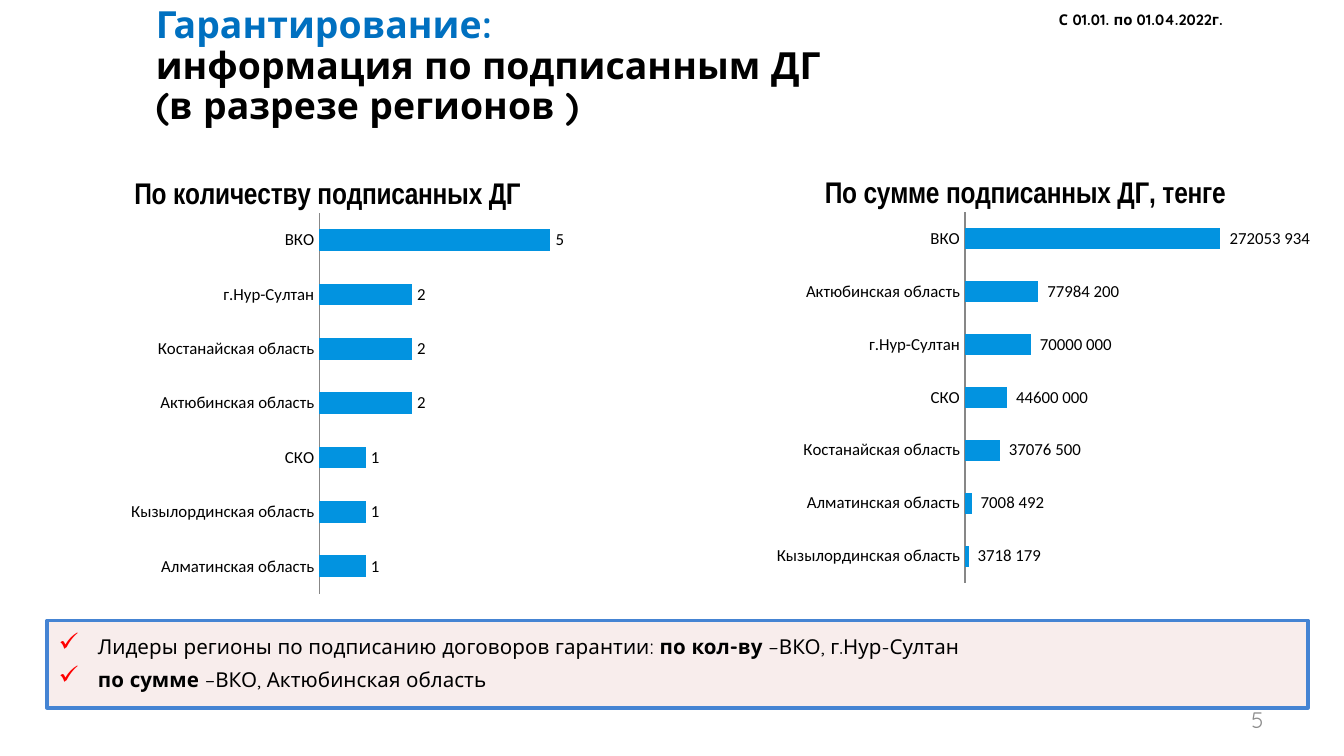
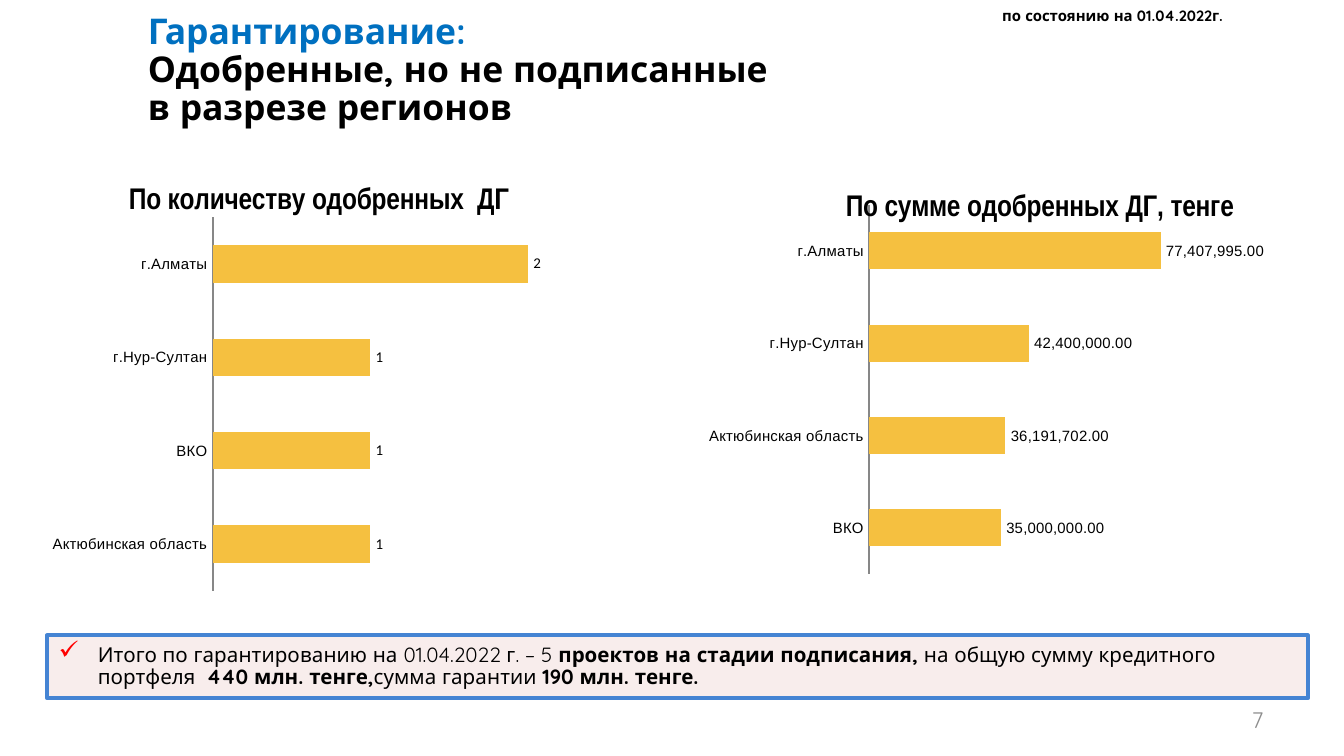
from dataclasses import dataclass

from lxml import etree
from pptx import Presentation
from pptx.chart.data import CategoryChartData
from pptx.dml.color import RGBColor
from pptx.enum.chart import XL_CHART_TYPE, XL_LABEL_POSITION, XL_TICK_MARK
from pptx.enum.shapes import MSO_SHAPE
from pptx.enum.text import MSO_ANCHOR, MSO_AUTO_SIZE, PP_ALIGN
from pptx.oxml.ns import qn
from pptx.util import Cm, Pt

BAR = XL_CHART_TYPE.BAR_CLUSTERED
OUTSIDE_END = XL_LABEL_POSITION.OUTSIDE_END
NO_TICK = XL_TICK_MARK.NONE
RECTANGLE = MSO_SHAPE.RECTANGLE
TOP, MIDDLE = MSO_ANCHOR.TOP, MSO_ANCHOR.MIDDLE
LEFT, RIGHT = PP_ALIGN.LEFT, PP_ALIGN.RIGHT
FIXED = MSO_AUTO_SIZE.NONE
TITLE_ONLY = 5


@dataclass(frozen=True)
class Theme:
    """Colours, fonts and type sizes shared by the slides."""
    accent: str = "0070C0"
    text: str = "000000"
    muted: str = "8C8C8C"
    axis: str = "878787"
    note_fill: str = "F2DCDB"
    note_line: str = "4584D3"
    check: str = "FF0000"
    signed: str = "0293E0"
    approved: str = "F5C040"
    font: str = "Quicksand"
    chart_font: str = "Calibri"
    label_font: str = "Arial"
    caption_font: str = "Arial Narrow"
    date_size: float = 8
    note_size: float = 11
    number_size: float = 12
    caption_size: float = 16
    chart_size: float = 10
    leading: float = 0.9


THEME = Theme()


@dataclass(frozen=True)
class BarChart:
    """Content and layout of one horizontal bar chart."""
    box: tuple
    caption: str
    caption_at: tuple
    plot: tuple
    rows: tuple
    limit: float
    color: str
    size: float
    label_font: str = THEME.chart_font
    axis_font: str = THEME.chart_font
    number_format: str = "General"
    axis_width: float = 0.75


def lengths(box):
    """Turn a box in centimetres into lengths."""
    return [Cm(value) for value in box]


def style(font, name, size, color=THEME.text, bold=False):
    """Set the typeface, size, colour and weight of a font."""
    font.name = name
    font.size = Pt(size)
    font.bold = bold
    font.color.rgb = RGBColor.from_string(color)


def add_span(para, text, size, color=THEME.text, bold=False):
    """Append one run in the text font."""
    span = para.add_run()
    span.text = text
    style(span.font, THEME.font, size, color, bold)


def paragraphs(frame, count):
    """Yield the given number of paragraphs of a text frame."""
    yield frame.paragraphs[0]
    for _ in range(count - 1):
        yield frame.add_paragraph()


def draw_title(page, box, lines, size):
    """Place the title: a coloured first line, then black lines."""
    title = page.shapes.title
    title.left, title.top, title.width, title.height = lengths(box)
    frame = title.text_frame
    frame.auto_size = FIXED
    frame.word_wrap = True
    frame.vertical_anchor = TOP
    for index, para in enumerate(paragraphs(frame, len(lines))):
        para.alignment = LEFT
        para.line_spacing = THEME.leading
        para.space_before = Pt(0)
        color = THEME.text if index else THEME.accent
        add_span(para, lines[index], size, color, True)


def draw_label(page, box, text, size, color, bold=False, align=LEFT, anchor=TOP, wrap=True):
    """Place one line of text."""
    frame = page.shapes.add_textbox(*lengths(box)).text_frame
    frame.word_wrap = wrap
    frame.vertical_anchor = anchor
    para = frame.paragraphs[0]
    para.alignment = align
    add_span(para, text, size, color, bold)


def add_check(para):
    """Give a paragraph a red check mark and a hanging indent."""
    props = para._p.get_or_add_pPr()
    props.set("marL", str(Cm(0.76)))
    props.set("indent", str(Cm(-0.74)))
    color = etree.SubElement(props, qn("a:buClr"))
    etree.SubElement(color, qn("a:srgbClr")).set("val", THEME.check)
    etree.SubElement(props, qn("a:buSzPct")).set("val", "125000")
    etree.SubElement(props, qn("a:buChar")).set("char", "✓")


def draw_note(page, box, items):
    """Draw the tinted band with checked conclusions of (text, bold) runs."""
    note = page.shapes.add_shape(RECTANGLE, *lengths(box))
    note.shadow.inherit = False
    note.fill.solid()
    note.fill.fore_color.rgb = RGBColor.from_string(THEME.note_fill)
    tint = note._element.spPr.find(qn("a:solidFill"))[0]
    etree.SubElement(tint, qn("a:alpha")).set("val", "50000")
    note.line.color.rgb = RGBColor.from_string(THEME.note_line)
    note.line.width = Pt(2)
    frame = note.text_frame
    frame.word_wrap = True
    frame.vertical_anchor = MIDDLE
    frame.margin_left = frame.margin_right = Cm(0.2)
    frame.margin_top = frame.margin_bottom = Cm(0.1)
    for para, spans in zip(paragraphs(frame, len(items)), items):
        add_check(para)
        para.alignment = LEFT
        para.line_spacing = THEME.leading
        para.space_after = Pt(6)
        for text, bold in spans:
            add_span(para, text, THEME.note_size, bold=bold)


def set_layout(parent, index, values, inner=False):
    """Fix a chart part at fractions of the chart area."""
    for old in parent.findall(qn("c:layout")):
        parent.remove(old)
    layout = etree.Element(qn("c:layout"))
    manual = etree.SubElement(layout, qn("c:manualLayout"))
    settings = [("layoutTarget", "inner")] if inner else []
    settings += [("xMode", "edge"), ("yMode", "edge")]
    settings += zip("xywh", values)
    for name, value in settings:
        etree.SubElement(manual, qn(f"c:{name}")).set("val", str(value))
    parent.insert(index, layout)


def draw_chart(page, item):
    """Draw a captioned bar chart with values at the bar ends."""
    data = CategoryChartData(number_format=item.number_format)
    data.categories = [name for name, _ in reversed(item.rows)]
    data.add_series("Series 1", [value for _, value in reversed(item.rows)])
    chart = page.shapes.add_chart(BAR, *lengths(item.box), data).chart
    chart.has_legend = False
    style(chart.font, THEME.chart_font, THEME.chart_size)

    chart.has_title = True
    span = chart.chart_title.text_frame.paragraphs[0].add_run()
    span.text = item.caption
    style(span.font, THEME.caption_font, THEME.caption_size, bold=True)
    root = chart._chartSpace.chart
    set_layout(root.find(qn("c:title")), 1, item.caption_at)
    set_layout(root.plotArea, 0, item.plot, inner=True)

    names = chart.category_axis
    names.major_tick_mark = names.minor_tick_mark = NO_TICK
    names.has_major_gridlines = False
    names.format.line.color.rgb = RGBColor.from_string(THEME.axis)
    names.format.line.width = Pt(item.axis_width)
    style(names.tick_labels.font, item.axis_font, item.size)
    values = chart.value_axis
    values.minimum_scale, values.maximum_scale = 0, item.limit
    values.has_major_gridlines = False
    values.visible = False

    bars = chart.plots[0]
    bars.gap_width = 150
    bars.vary_by_categories = False
    fill = bars.series[0].format.fill
    fill.solid()
    fill.fore_color.rgb = RGBColor.from_string(item.color)
    bars.has_data_labels = True
    labels = bars.data_labels
    labels.show_value = True
    labels.position = OUTSIDE_END
    labels.number_format = item.number_format
    labels.number_format_is_linked = False
    style(labels.font, item.label_font, item.size)


def draw_number(page, number):
    """Place the page number at the lower right."""
    draw_label(page, (18.21, 13.23, 5.92, 0.76), number, THEME.number_size,
               THEME.muted, align=RIGHT, anchor=MIDDLE)


def signed_page(deck):
    """Build the slide on signed guarantee contracts."""
    page = deck.slides.add_slide(deck.slide_layouts[TITLE_ONLY])
    draw_number(page, "5")
    draw_title(page, (2.69, 0, 16, 2.6),
               ("Гарантирование: ", "информация по подписанным ДГ", "(в разрезе регионов )"), 20)
    draw_note(page, (0.89, 11.73, 23.83, 1.65), (
        (("Лидеры регионы по подписанию договоров гарантии: ", False),
         ("по кол-ву ", True), ("–ВКО, г.Нур-Султан", False)),
        (("по сумме ", True), ("–ВКО, Актюбинская область", False)),
    ))
    draw_label(page, (19.76, 0.08, 3.76, 0.61), "С 01.01. по 01.04.2022г.",
               THEME.date_size, THEME.text, bold=True, wrap=False)
    draw_chart(page, BarChart(
        (0.03, 2.95, 12.04, 8.59), "По количеству подписанных ДГ", (0.2, 0.04),
        (0.499, 0.125, 0.435, 0.838),
        (("ВКО", 5), ("г.Нур-Султан", 2), ("Костанайская область", 2),
         ("Актюбинская область", 2), ("СКО", 1), ("Кызылординская область", 1),
         ("Алматинская область", 1)),
        6, THEME.signed, 9))
    draw_chart(page, BarChart(
        (13.16, 2.95, 12.24, 8.36), "По сумме подписанных ДГ, тенге", (0.19, 0.04),
        (0.415, 0.127, 0.435, 0.838),
        (("ВКО", 272053934), ("Актюбинская область", 77984200),
         ("г.Нур-Султан", 70000000), ("СКО", 44600000),
         ("Костанайская область", 37076500), ("Алматинская область", 7008492),
         ("Кызылординская область", 3718179)),
        300000000, THEME.signed, 9, number_format="_-* #\\ ##0_р_._-"))


def approved_page(deck):
    """Build the slide on approved but unsigned contracts."""
    page = deck.slides.add_slide(deck.slide_layouts[TITLE_ONLY])
    draw_number(page, "7")
    draw_title(page, (2.54, 0.13, 16, 2.6),
               ("Гарантирование: ", "Одобренные, но не подписанные ", "в разрезе регионов"), 19)
    draw_label(page, (18.69, 0, 5.79, 0.61), "по состоянию на 01.04.2022г.",
               THEME.date_size, THEME.text, bold=True)
    draw_note(page, (0.89, 12.01, 23.83, 1.19), (
        (("Итого по гарантированию на 01.04.2022 г. – 5 ", False),
         ("проектов на стадии подписания, ", True),
         ("на общую сумму кредитного портфеля  ", False), ("440 млн. тенге,", True),
         ("сумма гарантии ", False), ("190 млн. тенге.", True)),
    ))
    draw_chart(page, BarChart(
        (-0.08, 3.05, 12.07, 8.46), "По количеству одобренных  ДГ", (0.2, 0.04),
        (0.34, 0.125, 0.617, 0.835),
        (("г.Алматы", 2), ("г.Нур-Султан", 1), ("ВКО", 1), ("Актюбинская область", 1)),
        2.5, THEME.approved, 8, axis_font=THEME.label_font, axis_width=1.25))
    draw_chart(page, BarChart(
        (12.29, 3.28, 13.31, 8.23), "По сумме одобренных ДГ, тенге", (0.27, 0.03),
        (0.311, 0.072, 0.481, 0.848),
        (("г.Алматы", 77407995), ("г.Нур-Султан", 42400000),
         ("Актюбинская область", 36191702), ("ВКО", 35000000)),
        90000000, THEME.approved, 8, THEME.label_font, THEME.label_font, "#,##0.00", 1.25))


def main():
    """Build and save the deck."""
    deck = Presentation()
    deck.slide_width, deck.slide_height = Cm(25.4), Cm(14.29)
    signed_page(deck)
    approved_page(deck)
    deck.save("out.pptx")


if __name__ == "__main__":
    main()
